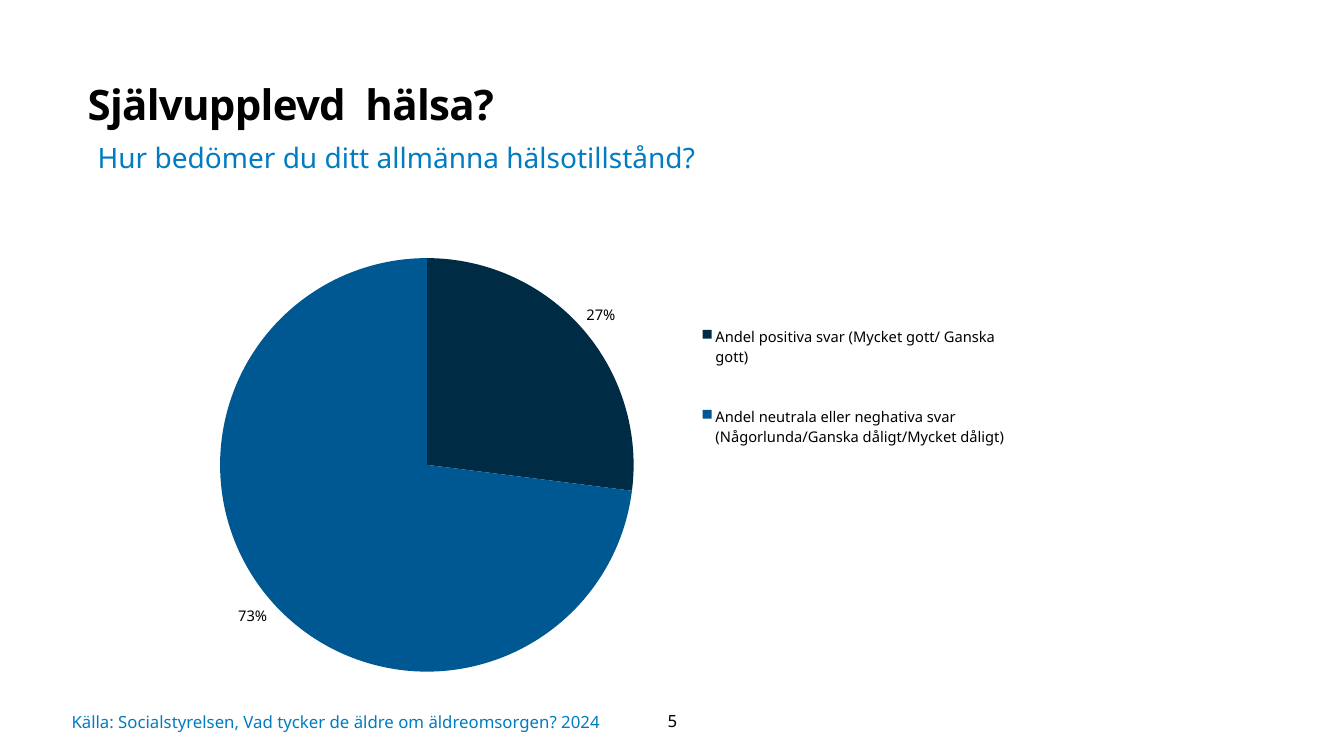
from lxml.etree import SubElement
from pptx import Presentation
from pptx.chart.data import CategoryChartData
from pptx.dml.color import RGBColor
from pptx.enum.chart import XL_CHART_TYPE, XL_LABEL_POSITION, XL_LEGEND_POSITION
from pptx.enum.text import MSO_ANCHOR, PP_ALIGN
from pptx.oxml.ns import qn
from pptx.util import Pt

# Theme
THEME = {
    "font": "Noto Sans",
    "black": RGBColor.from_string("000000"),
    "blue": RGBColor.from_string("017CC1"),
    "slices": ("002B45", "005892"),
    "head": 30, "sub": 20, "foot": 12, "label": 10.5, "chart": 10,
}

# Content: text, box, color, size, insets, format
PAD = (7.2, 3.6, 7.2, 3.6)
MID = {"vertical_anchor": MSO_ANCHOR.MIDDLE}
TEXTS = [
    ("Självupplevd  hälsa?", (62.64, 52.56, 707.76, 43.92),
     "black", "head", (0, 0, 7.2, 3.6), {}),
    ("Hur bedömer du ditt allmänna hälsotillstånd?", (62.64, 96.48, 567.36, 31.68),
     "blue", "sub", PAD, {}),
    ("Källa: Socialstyrelsen, Vad tycker de äldre om äldreomsorgen? 2024",
     (51.12, 500.4, 392.4, 30.24), "blue", "foot", (0, 0, 0, 0), MID),
    ("5", (443.52, 500.4, 73.44, 28.8), "black", "foot", PAD, MID),
]
SHARES = {
    "Andel positiva svar (Mycket gott/ Ganska gott)": 27,
    "Andel neutrala eller neghativa svar (Någorlunda/Ganska dåligt/Mycket dåligt)": 73,
}
CHART = (119.52, 152.64, 628.56, 348.48)
PLOT = (0.06, 0.09, 0.47, 0.85)
LEGEND = (0.6, 0.15, 0.36, 0.41)


def style(item, values):
    for name, value in values.items():
        setattr(item, name, value)


def set_font(font, size, color="black", bold=False):
    style(font, {"name": THEME["font"], "size": Pt(THEME[size]), "bold": bold})
    font.color.rgb = THEME[color]


def add_text(slide, text, box, color, size, pad, form):
    frame = slide.shapes.add_textbox(*map(Pt, box)).text_frame
    sides = ("margin_left", "margin_top", "margin_right", "margin_bottom")
    style(frame, {"word_wrap": True, **dict(zip(sides, map(Pt, pad))), **form})
    para = frame.paragraphs[0]
    run = para.add_run()
    run.text = text
    set_font(run.font, size, color, size == "head")
    return para


def place(parent, index, area, inner=False):
    """Set a manual layout as fractions of the chart."""
    for old in parent.findall(qn("c:layout")):
        parent.remove(old)
    layout = SubElement(parent, qn("c:layout"))
    parent.insert(index, layout)
    manual = SubElement(layout, qn("c:manualLayout"))
    rules = [("layoutTarget", "inner")] if inner else []
    rules += [("xMode", "edge"), ("yMode", "edge"), *zip("xywh", area)]
    for tag, value in rules:
        SubElement(manual, qn("c:" + tag)).set("val", str(value))


def add_pie(slide):
    data = CategoryChartData()
    data.categories = list(SHARES)
    data.add_series("Series 1", list(SHARES.values()))
    chart = slide.shapes.add_chart(XL_CHART_TYPE.PIE, *map(Pt, CHART), data).chart
    style(chart, {"has_title": False, "has_legend": True})
    set_font(chart.font, "chart")

    # Slices
    plot = chart.plots[0]
    style(plot, {"vary_by_categories": True, "has_data_labels": True})
    for i, color in enumerate(THEME["slices"]):
        fill = plot.series[0].points[i].format.fill
        fill.solid()
        fill.fore_color.rgb = RGBColor.from_string(color)

    # Labels and legend
    style(plot.data_labels, {
        "show_percentage": True, "show_value": False,
        "number_format": "0%", "number_format_is_linked": False,
        "position": XL_LABEL_POSITION.OUTSIDE_END})
    set_font(plot.data_labels.font, "label")
    legend = chart.legend
    style(legend, {"position": XL_LEGEND_POSITION.RIGHT, "include_in_layout": False})
    set_font(legend.font, "label")
    area = chart.element.find(".//" + qn("c:plotArea"))
    place(area, 0, PLOT, True)
    place(chart.element.find(".//" + qn("c:legend")), 1, LEGEND)


def main():
    deck = Presentation()
    style(deck, {"slide_width": Pt(960), "slide_height": Pt(540)})
    slide = deck.slides.add_slide(deck.slide_layouts[6])

    # Texts
    head, sub, source, number = [add_text(slide, *item) for item in TEXTS]
    head.line_spacing = 1.1
    head.runs[0].font._element.set("spc", "-50")
    number.alignment = PP_ALIGN.CENTER

    # Chart
    add_pie(slide)
    deck.save("out.pptx")


if __name__ == "__main__":
    main()
